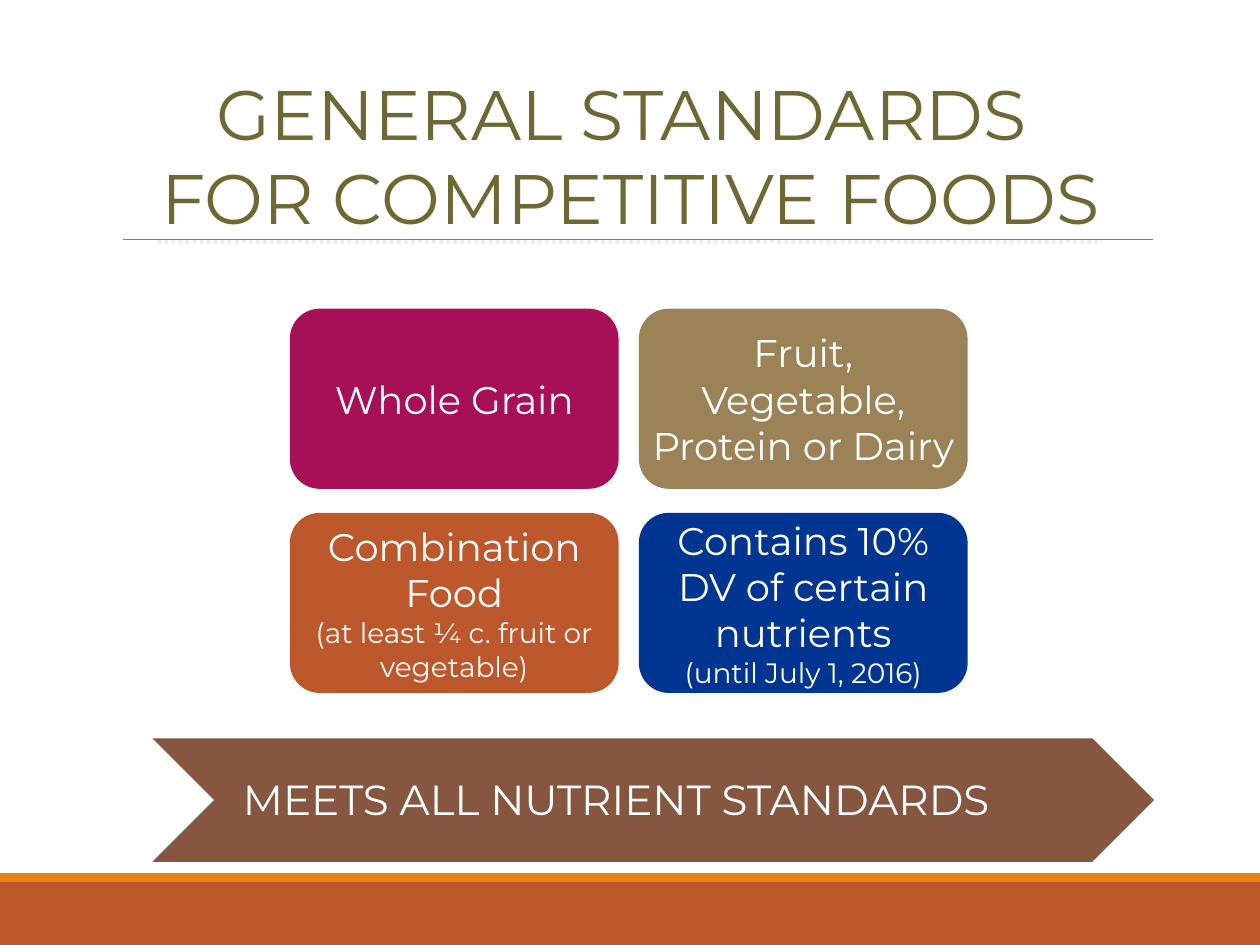
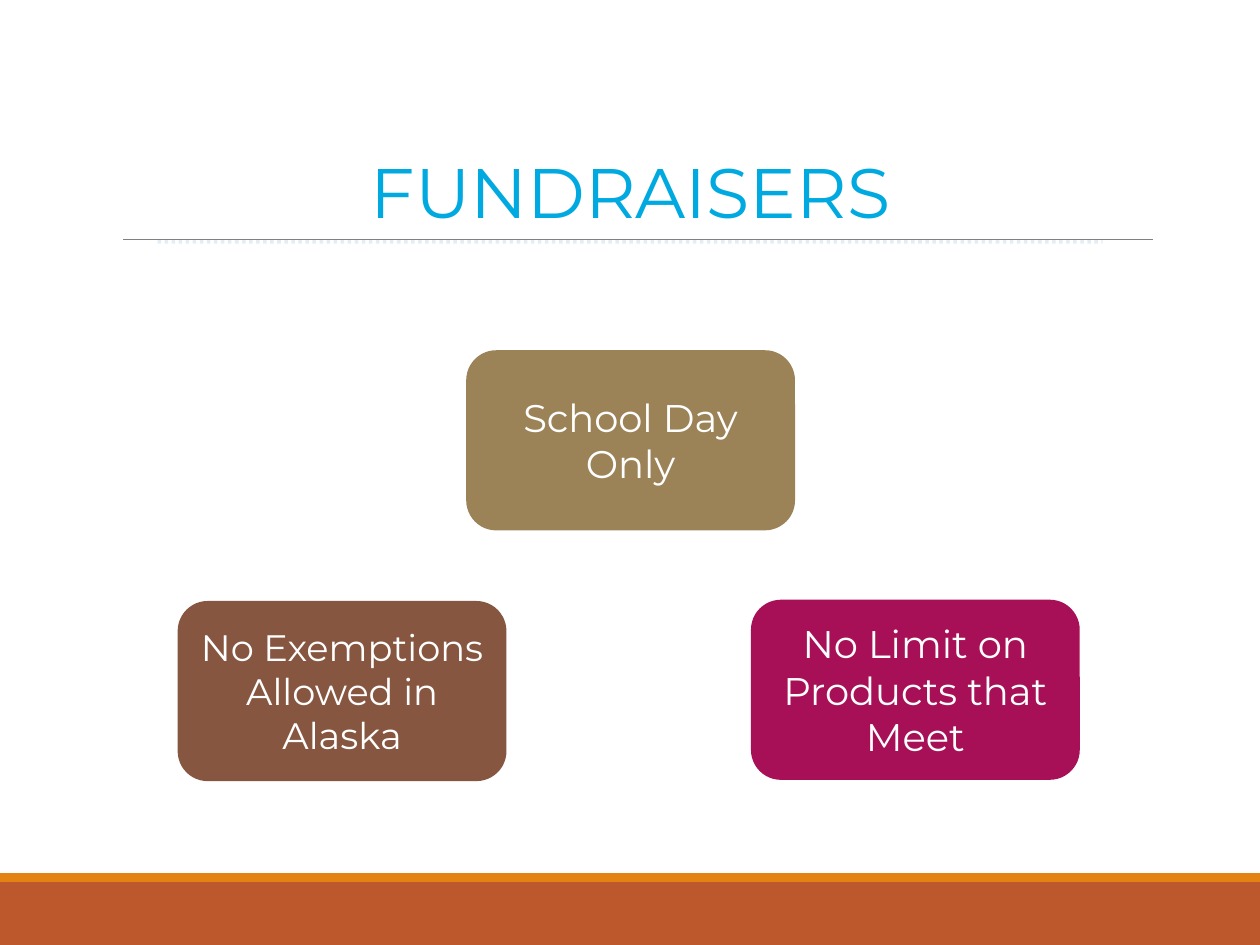
import pptx
import pptx.util
import pptx.dml.color
import pptx.enum.dml
import pptx.enum.shapes
import pptx.enum.text
import pptx.oxml.ns
import lxml.etree

COLORS = {
    "white": "FFFFFF", "rust": "BD582C", "orange": "E48312", "gray": "808080",
    "tan": "9B8357", "berry": "A71056", "navy": "003591", "brown": "865640",
    "olive": "6D6834", "sky": "00A9E0", "mist": "CCDDEA",
}
FONT = "Montserrat"
COLS, ROWS = 100, 75            # page grid
TILE_W, TILE_H = 26.1, 14.3     # tile size in grid units
SHAPES = pptx.enum.shapes.MSO_SHAPE
ALIGN = pptx.enum.text.PP_ALIGN
ANCHOR = pptx.enum.text.MSO_ANCHOR


def rgb(name):
    return pptx.dml.color.RGBColor.from_string(COLORS[name])


class Deck:
    """Holds the style and the current slide; positions are in grid units."""

    def __init__(self):
        self.prs = pptx.Presentation()
        self.prs.slide_width = pptx.util.Inches(10)
        self.prs.slide_height = pptx.util.Inches(7.5)
        self.s = None

    def x(self, cols):
        return round(self.prs.slide_width * cols / COLS)

    def y(self, rows):
        return round(self.prs.slide_height * rows / ROWS)

    def box(self, left, top, width, height):
        return self.x(left), self.y(top), self.x(width), self.y(height)

    def new_slide(self, title_lines, title_top, title_height, title_color):
        self.s = self.prs.slides.add_slide(self.prs.slide_layouts[5])
        # Footer bands and rule
        self.shape(SHAPES.RECTANGLE, (0, 70, 100, 5), "rust")
        self.shape(SHAPES.RECTANGLE, (0, 69.3, 100, 0.7), "orange")
        self.line(9.8, 91.5, 19, "gray", 0.5)
        # Title with dotted underline
        sp = self.s.shapes.title
        sp.left, sp.top, sp.width, sp.height = self.box(1.7, title_top, 96.7, title_height)
        tf = sp.text_frame
        tf.auto_size = pptx.enum.text.MSO_AUTO_SIZE.NONE
        tf.vertical_anchor = ANCHOR.TOP
        self.add_lines(tf, [(text, 40) for text in title_lines], title_color)
        self.line(12.5, 87.5, 19.2, "mist", 2, dotted=True)

    def add_lines(self, tf, lines, color="white", align=ALIGN.CENTER):
        tf.word_wrap = True
        for i, (text, size) in enumerate(lines):
            p = tf.add_paragraph() if i else tf.paragraphs[0]
            p.alignment = align
            p.space_before = pptx.util.Pt(0)
            r = p.add_run()
            r.text = text
            r.font.name = FONT
            r.font.size = pptx.util.Pt(size)
            r.font.color.rgb = rgb(color)

    def shape(self, kind, area, color):
        sp = self.s.shapes.add_shape(kind, *self.box(*area))
        sp.shadow.inherit = False
        sp.fill.solid()
        sp.fill.fore_color.rgb = rgb(color)
        sp.line.fill.background()
        return sp

    def line(self, left, right, row, color, weight, dotted=False):
        cx = self.s.shapes.add_connector(
            pptx.enum.shapes.MSO_CONNECTOR.STRAIGHT,
            self.x(left), self.y(row), self.x(right), self.y(row))
        cx.line.color.rgb = rgb(color)
        cx.line.width = pptx.util.Pt(weight)
        qn = pptx.oxml.ns.qn
        if dotted:
            cx.line.dash_style = pptx.enum.dml.MSO_LINE.ROUND_DOT
            tint = next(cx._element.spPr.iter(qn("a:srgbClr")))
            lxml.etree.SubElement(tint, qn("a:alpha"), val="50000")
        lxml.etree.SubElement(cx._element.spPr, qn("a:effectLst"))

    def tile(self, left, top, color, *lines):
        sp = self.shape(SHAPES.ROUNDED_RECTANGLE, (left, top, TILE_W, TILE_H), color)
        tf = sp.text_frame
        tf.margin_left = tf.margin_right = pptx.util.Inches(0.02)
        tf.margin_top = tf.margin_bottom = 0
        tf.vertical_anchor = ANCHOR.MIDDLE
        self.add_lines(tf, lines)

    def label(self, area, text, size):
        sp = self.s.shapes.add_textbox(*self.box(*area))
        self.add_lines(sp.text_frame, [(text, size)], align=ALIGN.LEFT)


def standards_slide(deck):
    deck.new_slide(["GENERAL STANDARDS ", "FOR COMPETITIVE FOODS"], 5.1, 14.5, "olive")
    # Two-by-two grid of standards
    standards = [
        ("berry", [("Whole Grain", 22)]),
        ("tan", [("Fruit, Vegetable, Protein or Dairy", 22)]),
        ("rust", [("Combination Food", 22), ("(at least ¼ c. fruit or vegetable)", 16)]),
        ("navy", [("Contains 10% DV of certain nutrients", 22), ("(until July 1, 2016)", 16)]),
    ]
    for i, (color, lines) in enumerate(standards):
        row, col = divmod(i, 2)
        deck.tile(23 + col * 27.7, 24.5 + row * 16.2, color, *lines)
    # Conclusion arrow
    deck.shape(SHAPES.CHEVRON, (12.1, 58.6, 79.5, 9.8), "brown")
    deck.label((18.3, 60.9, 70.1, 5), "MEETS ALL NUTRIENT STANDARDS", 24)


def fundraisers_slide(deck):
    deck.new_slide(["FUNDRAISERS"], 11.3, 7.7, "sky")
    # Triangle of rules
    deck.tile(37, 27.8, "tan", ("School Day Only", 22))
    deck.tile(59.6, 47.6, "berry", ("No Limit on Products that Meet", 22))
    deck.tile(14.1, 47.7, "brown", ("No Exemptions Allowed in Alaska", 21))


def main():
    deck = Deck()
    standards_slide(deck)
    fundraisers_slide(deck)
    deck.prs.save("out.pptx")


if __name__ == "__main__":
    main()
